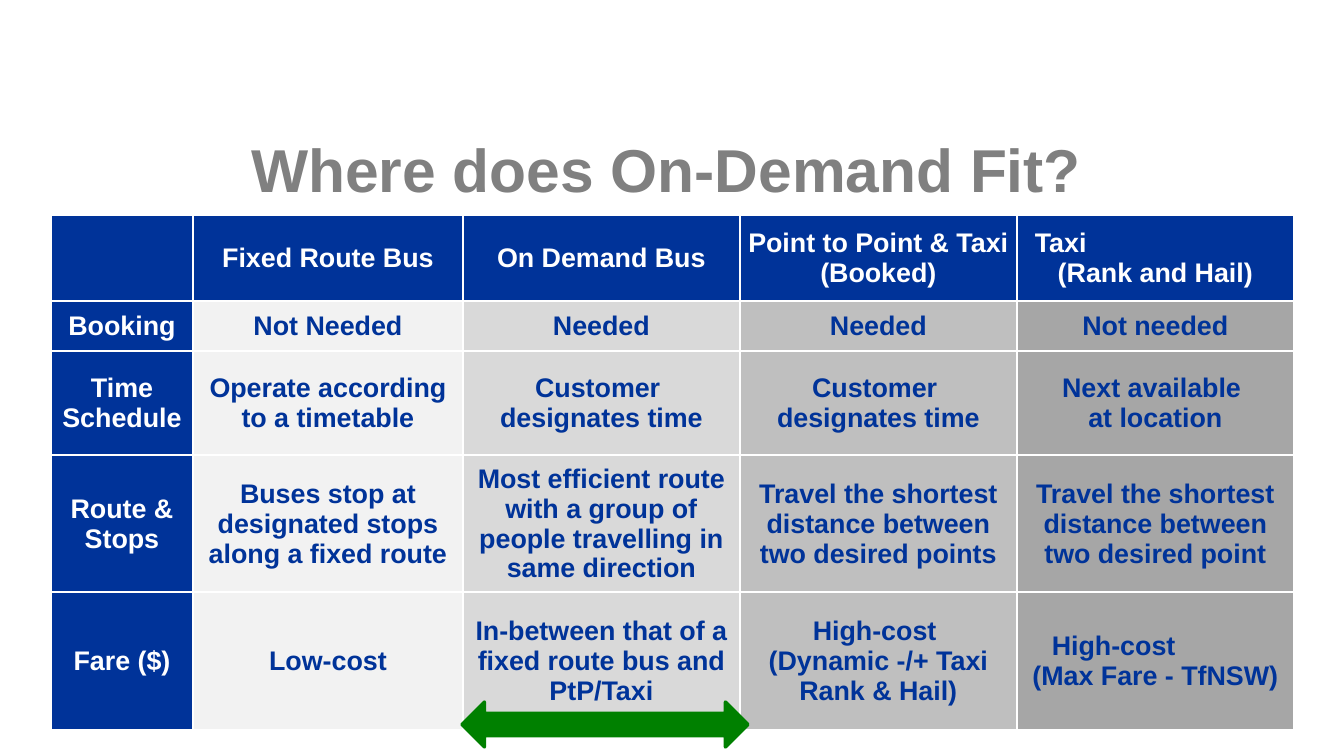
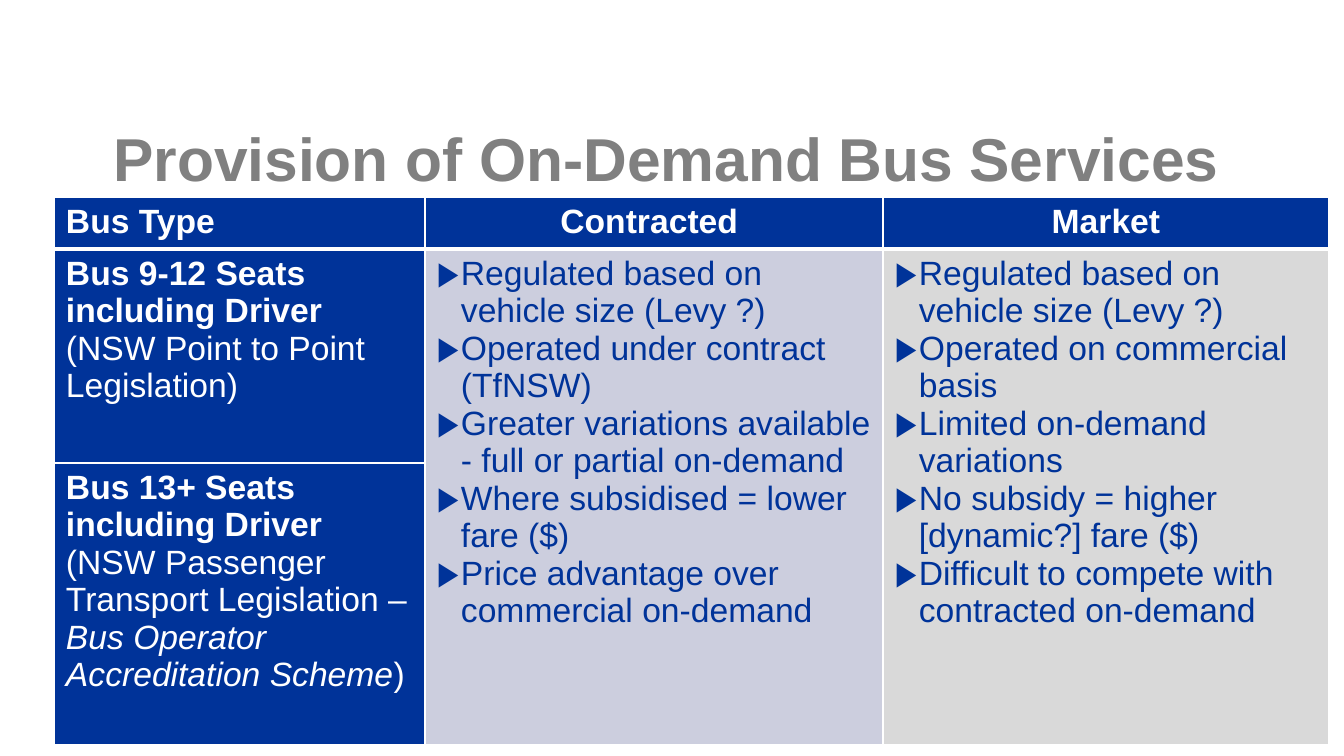
from lxml import etree
from pptx import Presentation
from pptx import util as u
from pptx.dml.color import RGBColor
from pptx.enum import shapes, text
from pptx.oxml.ns import qn

NAVY = RGBColor(0x00, 0x33, 0x99)
WHITE = RGBColor(0xFF, 0xFF, 0xFF)
TITLE_GREY = RGBColor(0x80, 0x80, 0x80)
GREEN = RGBColor(0x00, 0x80, 0x00)
LILAC = RGBColor(0xCC, 0xCE, 0xDE)
SILVER = RGBColor(0xD9, 0xD9, 0xD9)
COLUMN_FILLS = [NAVY, RGBColor(0xF2, 0xF2, 0xF2), SILVER,
                RGBColor(0xBF, 0xBF, 0xBF), RGBColor(0xA6, 0xA6, 0xA6)]

FONT = "Arial"
PX = 914400 / 121
CENTER = text.PP_ALIGN.CENTER
LEFT = text.PP_ALIGN.LEFT

# Slide 1: one string per cell, one line per paragraph
FIT_TITLE = "Where does On-Demand Fit?"
FIT_COLUMNS = [142, 270, 277, 277, 277]
FIT_HEIGHTS = [86, 50, 104, 137, 138]
FIT_ROWS = [
    ["", "Fixed Route Bus", "On Demand Bus",
     "Point to Point & Taxi (Booked)", "Taxi\n(Rank and Hail)"],
    ["Booking", "Not Needed", "Needed", "Needed", "Not needed"],
    ["Time Schedule", "Operate according to a timetable",
     "Customer \ndesignates time", "Customer \ndesignates time",
     "Next available \nat location"],
    ["Route & Stops", "Buses stop at designated stops along a fixed route",
     "Most efficient route with a group of people travelling in same direction",
     "Travel the shortest distance between two desired points",
     "Travel the shortest distance between two desired point"],
    ["Fare ($)", "Low-cost",
     "In-between that of a fixed route bus and PtP/Taxi",
     "High-cost \n(Dynamic -/+ Taxi Rank & Hail)",
     "High-cost\n(Max Fare - TfNSW)"],
]
# First lines set to the left: (row, column) -> indent
FIT_INDENTS = {(0, 4): 17, (4, 4): 34}

# Slide 2
PROVISION_TITLE = "Provision of On-Demand Bus Services"
PROVISION_COLUMNS = [371, 458, 446]
PROVISION_HEIGHTS = [52, 214, 282]
PROVISION_HEADS = [("Bus Type", LEFT), ("Contracted ", CENTER), ("Market", CENTER)]
BOLD = {"bold": True}
PLAIN = {"bold": False}
BUS_TYPES = [
    [[("Bus 9-12 Seats including Driver", BOLD)],
     [("(NSW Point to Point Legislation)", PLAIN)]],
    [[("Bus 13+ Seats", BOLD)],
     [("including Driver", BOLD)],
     [("(NSW Passenger Transport Legislation – ", PLAIN),
       ("Bus Operator Accreditation Scheme", {"bold": False, "italic": True}),
       (")", PLAIN)]],
]
SERVICE_POINTS = [
    (LILAC, ["Regulated based on vehicle size (Levy ?)",
             "Operated under contract (TfNSW)",
             "Greater variations available - full or partial on-demand",
             "Where subsidised = lower fare ($)",
             "Price advantage over commercial on-demand"]),
    (SILVER, ["Regulated based on vehicle size (Levy ?)",
              "Operated on commercial basis",
              "Limited on-demand variations",
              "No subsidy = higher [dynamic?] fare ($)",
              "Difficult to compete with contracted on-demand"]),
]


def px(*lengths):
    return [u.Emu(round(length * PX)) for length in lengths]


def set_all(target, formats):
    for name, value in formats.items():
        setattr(target, name, value)


def add_span(para, words, size, color, **formats):
    span = para.add_run()
    span.text = words
    set_all(span.font, {"name": FONT, "size": u.Pt(size), **formats})
    span.font.color.rgb = color


def add_titled_slide(deck, words, top):
    slide = deck.slides.add_slide(deck.slide_layouts[5])
    title = slide.shapes.title
    title.left, title.top, title.width, title.height = px(71, top, 1191, 151)
    frame = title.text_frame
    set_all(frame, {"word_wrap": True, "auto_size": text.MSO_AUTO_SIZE.NONE,
                    "vertical_anchor": text.MSO_ANCHOR.MIDDLE})
    para = frame.paragraphs[0]
    para.alignment = CENTER
    add_span(para, words, 36, TITLE_GREY, bold=True)
    return slide


def add_grid(slide, left, top, columns, heights):
    place = px(left, top, sum(columns), sum(heights))
    table = slide.shapes.add_table(len(heights), len(columns), *place).table
    for column, width in zip(table.columns, px(*columns)):
        column.width = width
    for row, height in zip(table.rows, px(*heights)):
        row.height = height
    return table


def style_cell(cell, fill, margins, anchor, bottom_line=1):
    """Fill the cell, set its insets and rule it in white."""
    cell.fill.solid()
    cell.fill.fore_color.rgb = fill
    cell.vertical_anchor = anchor
    sides = ("margin_left", "margin_top", "margin_right", "margin_bottom")
    set_all(cell, dict(zip(sides, px(*margins))))
    properties = cell._tc.get_or_add_tcPr()
    widths = {"a:lnL": 1, "a:lnR": 1, "a:lnT": 1, "a:lnB": bottom_line}
    for index, (tag, width) in enumerate(widths.items()):
        line = etree.Element(qn(tag), w=str(u.Pt(width)))
        paint = etree.SubElement(line, qn("a:solidFill"))
        etree.SubElement(paint, qn("a:srgbClr"), val=str(WHITE))
        properties.insert(index, line)


def cell_paragraphs(cell, items):
    """Yield a paragraph of the cell with each item."""
    frame = cell.text_frame
    for index, item in enumerate(items):
        yield (frame.add_paragraph() if index else frame.paragraphs[0]), item


def indent(para, left, first=0, bullet=None):
    properties = para._p.get_or_add_pPr()
    for name, length in zip(("marL", "indent"), px(left, first)):
        properties.set(name, str(length))
    if bullet:
        etree.SubElement(properties, qn("a:buFont"), typeface=FONT)
        etree.SubElement(properties, qn("a:buChar"), char=bullet)


def build_fit(deck):
    slide = add_titled_slide(deck, FIT_TITLE, 93)
    table = add_grid(slide, 51, 215, FIT_COLUMNS, FIT_HEIGHTS)
    for r, row in enumerate(FIT_ROWS):
        for c, words in enumerate(row):
            cell = table.cell(r, c)
            fill = COLUMN_FILLS[c] if r else NAVY
            style_cell(cell, fill, (1, 1, 1, 0), text.MSO_ANCHOR.MIDDLE)
            if not words:
                continue
            color = WHITE if fill == NAVY else NAVY
            for para, line in cell_paragraphs(cell, words.split("\n")):
                para.alignment = CENTER
                add_span(para, line, 16, color, bold=True)
            if (r, c) in FIT_INDENTS:
                first = cell.text_frame.paragraphs[0]
                first.alignment = LEFT
                indent(first, FIT_INDENTS[r, c])
    arrow = slide.shapes.add_shape(shapes.MSO_SHAPE.LEFT_RIGHT_ARROW,
                                   *px(462, 702, 286, 45))
    arrow.shadow.inherit = False
    arrow.fill.solid()
    arrow.fill.fore_color.rgb = GREEN
    arrow.line.color.rgb = GREEN
    arrow.line.width = u.Pt(2)


def build_provision(deck):
    slide = add_titled_slide(deck, PROVISION_TITLE, 82)
    table = add_grid(slide, 54, 197, PROVISION_COLUMNS, PROVISION_HEIGHTS)
    fills = [NAVY] + [fill for fill, _ in SERVICE_POINTS]
    for r in range(len(PROVISION_HEIGHTS)):
        for c, fill in enumerate(fills):
            style_cell(table.cell(r, c), fill if r else NAVY, (12, 6, 12, 6),
                       text.MSO_ANCHOR.TOP, 1 if r else 3)
    for c, (words, alignment) in enumerate(PROVISION_HEADS):
        para = table.cell(0, c).text_frame.paragraphs[0]
        para.alignment = alignment
        add_span(para, words, 20, WHITE, bold=True)
    for r, lines in enumerate(BUS_TYPES, 1):
        for para, spans in cell_paragraphs(table.cell(r, 0), lines):
            for words, formats in spans:
                add_span(para, words, 20, WHITE, **formats)
    for c, (_, points) in enumerate(SERVICE_POINTS, 1):
        cell = table.cell(1, c)
        cell.merge(table.cell(2, c))
        for para, words in cell_paragraphs(cell, points):
            indent(para, 24, -24, "▶")
            add_span(para, words, 20, NAVY, bold=False)


def main():
    deck = Presentation()
    deck.slide_width, deck.slide_height = px(1344, 756)
    build_fit(deck)
    build_provision(deck)
    deck.save("out.pptx")


if __name__ == "__main__":
    main()
